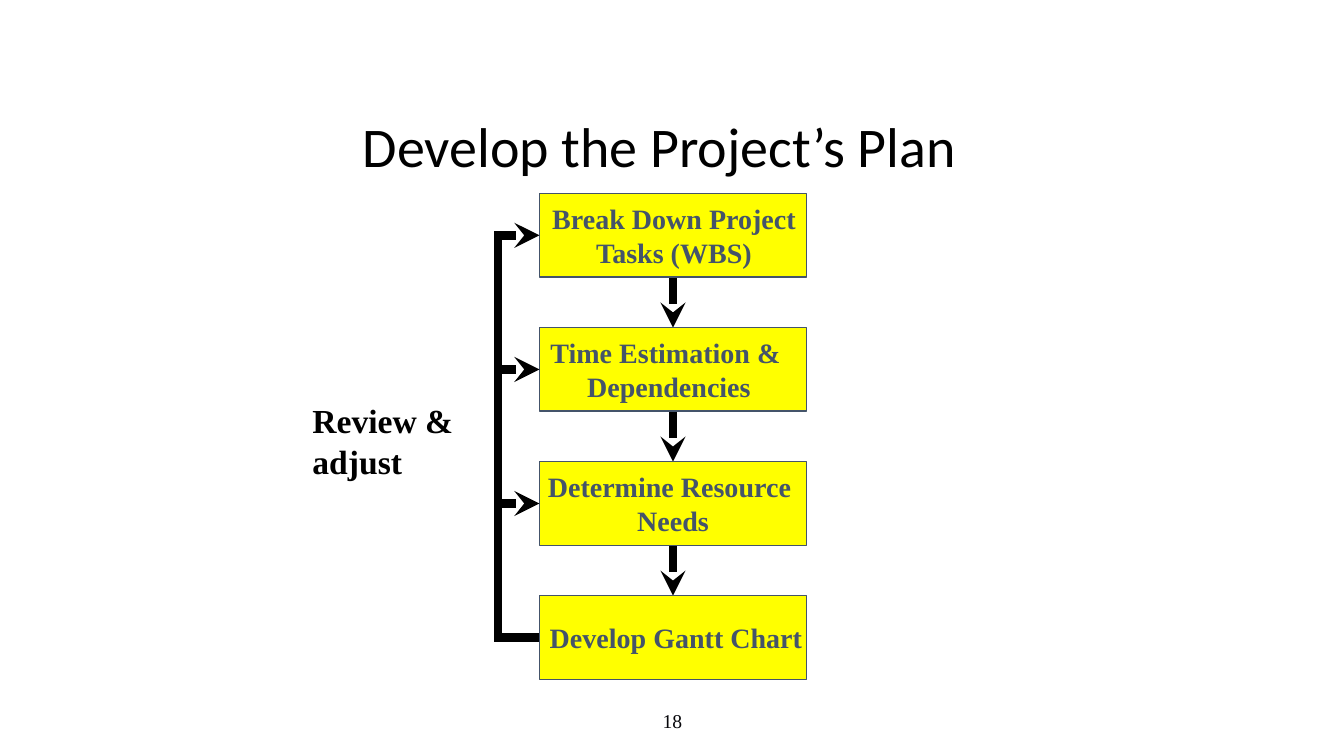
"""Build the project planning slide: four stacked steps with a review loop."""
from pptx import Presentation
from pptx.dml.color import RGBColor
from pptx.enum.shapes import MSO_CONNECTOR as Connector, MSO_SHAPE as Shape
from pptx.enum.text import MSO_ANCHOR as Anchor, MSO_AUTO_SIZE as AutoSize, PP_ALIGN as Align
from pptx.oxml.ns import qn
from pptx.util import Inches, Pt
from lxml.etree import SubElement

TITLE = "Develop the Project’s Plan"
REVIEW = "Review & adjust"
PAGE_NUMBER = "18"
STEPS = [
    (["Break Down Project", "Tasks (WBS)"], 0.01),
    (["Time Estimation & ", "Dependencies"], -0.04),
    (["Determine Resource ", "Needs"], 0),
    (["Develop Gantt Chart"], 0.03),
]

COLORS = {"black": "000000", "number": "06060A", "step": "FFFF00", "slate": "44546A"}
SERIF = "Times New Roman"
STEP_LEFT, STEP_TOP, STEP_WIDTH, STEP_HEIGHT = 5.35, 1.92, 2.65, 0.83
STEP_PITCH = 1.33
SPINE_X, SPINE_OVERHANG = 4.94, 0.04
STEP_INSET = 0.05


def rgb(name):
    """Return the named palette colour."""
    return RGBColor.from_string(COLORS[name])


def write(frame, lines, size, color="black", font=SERIF, bold=False,
          align=Align.LEFT, anchor=Anchor.TOP, wrap=True, spacing=None):
    """Fill a text frame with formatted paragraphs."""
    frame.auto_size = AutoSize.NONE
    frame.word_wrap = wrap
    frame.vertical_anchor = anchor
    for index, line in enumerate(lines):
        paragraph = frame.add_paragraph() if index else frame.paragraphs[0]
        paragraph.alignment = align
        paragraph.line_spacing = spacing
        run = paragraph.add_run()
        run.text = line
        run.font.name, run.font.size, run.font.bold = font, Pt(size), bold
        run.font.color.rgb = rgb(color)


def draw_line(shapes, start, end, arrow=False):
    """Draw a thick black line, with an arrowhead at its end if asked."""
    line = shapes.add_connector(Connector.STRAIGHT, *map(Inches, start + end))
    line.line.color.rgb = rgb("black")
    line.line.width = Pt(6)
    if arrow:
        SubElement(line.line._get_or_add_ln(), qn("a:tailEnd"), type="stealth")
    SubElement(line._element.spPr, qn("a:effectLst"))


def draw_step(shapes, lines, top, shift):
    """Draw one step, its text moved sideways by shift."""
    step = shapes.add_shape(Shape.RECTANGLE, *map(
        Inches, (STEP_LEFT, top, STEP_WIDTH, STEP_HEIGHT)))
    step.shadow.inherit = False
    step.fill.solid()
    step.fill.fore_color.rgb = rgb("step")
    step.line.color.rgb = rgb("slate")
    step.line.width = Pt(1)
    frame = step.text_frame
    frame.margin_left = Inches(STEP_INSET + max(0, 2 * shift))
    frame.margin_right = Inches(STEP_INSET + max(0, -2 * shift))
    write(frame, lines, 20, color="slate", bold=True, align=Align.CENTER,
          anchor=Anchor.MIDDLE, wrap=False)


def main():
    """Compose and save the slide."""
    deck = Presentation()
    deck.slide_width, deck.slide_height = Inches(13.33), Inches(7.5)
    slide = deck.slides.add_slide(deck.slide_layouts[5])
    shapes = slide.shapes

    title = shapes.title
    title.left, title.top, title.width, title.height = map(Inches, (3.5, 0.58, 6.42, 1.25))
    write(title.text_frame, [TITLE], 40, font="Calibri", anchor=Anchor.BOTTOM, spacing=0.9)

    tops = [STEP_TOP + STEP_PITCH * index for index in range(len(STEPS))]
    middles = [top + STEP_HEIGHT / 2 for top in tops]
    center_x = STEP_LEFT + STEP_WIDTH / 2

    for top, next_top in zip(tops, tops[1:]):
        draw_line(shapes, (center_x, top + STEP_HEIGHT), (center_x, next_top), arrow=True)
    for (lines, shift), top in zip(STEPS, tops):
        draw_step(shapes, lines, top, shift)

    draw_line(shapes, (STEP_LEFT, middles[-1]), (SPINE_X, middles[-1]))
    draw_line(shapes, (SPINE_X, middles[-1] + SPINE_OVERHANG),
              (SPINE_X, middles[0] - SPINE_OVERHANG))
    for middle in middles[:-1]:
        draw_line(shapes, (SPINE_X, middle), (STEP_LEFT, middle), arrow=True)

    review = shapes.add_textbox(*map(Inches, (3, 3.92, 1.67, 0.91)))
    write(review.text_frame, [REVIEW], 24, bold=True)
    page_number = shapes.add_textbox(*map(Inches, (4.42, 6.95, 4.5, 0.4)))
    write(page_number.text_frame, [PAGE_NUMBER], 14, color="number",
          align=Align.CENTER, anchor=Anchor.MIDDLE)

    deck.save("out.pptx")


if __name__ == "__main__":
    main()
